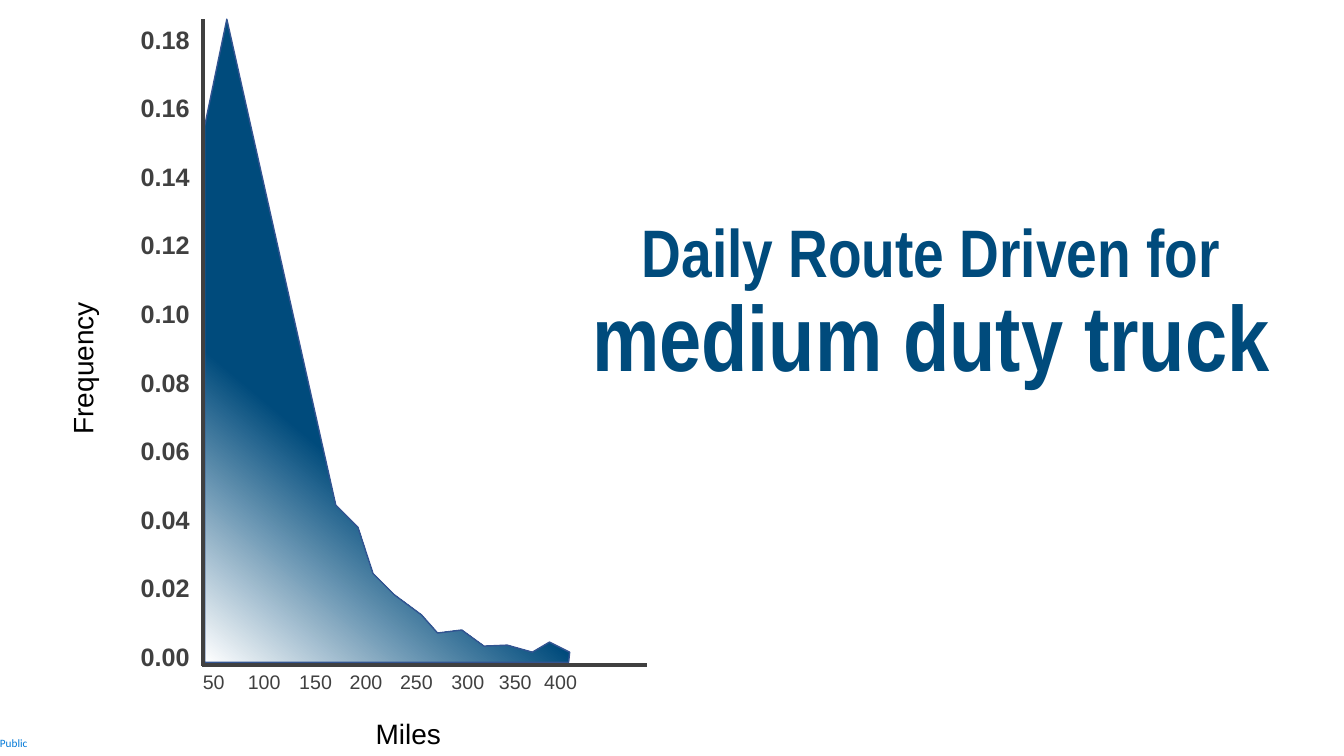
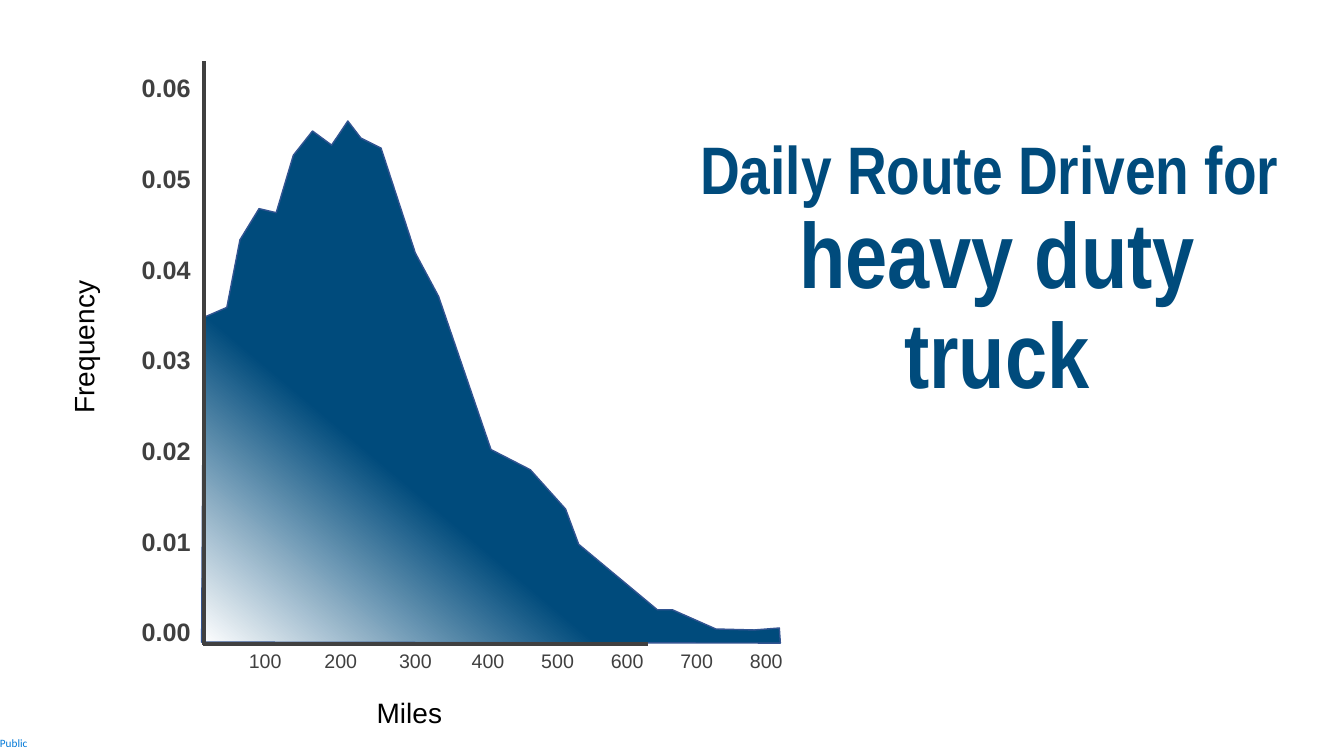
from dataclasses import dataclass
from lxml.etree import SubElement
from pptx import Presentation
from pptx.dml.color import RGBColor
from pptx.enum.shapes import MSO_CONNECTOR
from pptx.enum.text import MSO_ANCHOR, MSO_AUTO_SIZE, PP_ALIGN
from pptx.oxml.ns import qn
from pptx.util import Pt

PX = 9144  # 100 px to the inch


@dataclass(frozen=True)
class Theme:
    navy: str = "004B7C"
    edge: str = "325491"
    gray: str = "404040"
    black: str = "000000"
    white: str = "FFFFFF"
    blue: str = "0078D7"
    body: str = "Arial"
    head: str = "Arial Narrow"
    foot: str = "Calibri"
    lead: int = 48
    main: int = 66
    name: int = 20
    tick: int = 18
    mile: int = 14
    tag: int = 8


T = Theme()

CHARTS = [
    dict(
        title=["Daily Route Driven for", "medium duty truck"],
        place=(557, 149, 733, 308),
        area=[(203, 125), (203, 657), (564, 657), (565, 647), (545, 637),
              (528, 647), (503, 640), (480, 641), (458, 625), (434, 628),
              (418, 610), (391, 590), (370, 569), (355, 523), (333, 501),
              (225, 19)],
        axis=(201, 19, 660), end=642,
        step=0.02, count=10, gap=68, low=631,
        first=50, miles=[212, 262, 313, 363, 413, 464, 511, 556],
    ),
    dict(
        title=["Daily Route Driven for ", "heavy duty truck"],
        place=(681, 147, 616, 246),
        area=[(200, 637), (202, 315), (225, 305), (238, 238), (257, 207),
              (274, 211), (291, 154), (310, 130), (329, 144), (345, 120),
              (358, 137), (378, 147), (412, 251), (435, 294), (487, 446),
              (526, 466), (561, 505), (574, 540), (652, 605), (667, 605),
              (710, 624), (748, 625), (773, 623), (774, 638)],
        axis=(202, 61, 639), end=643,
        step=0.01, count=7, gap=90, low=607,
        first=100, miles=[263, 338, 412, 484, 553, 622, 691, 760],
    ),
]


def rgb(code):
    return RGBColor.from_string(code)


def write(page, box, lines, sizes, color, font=T.body, bold=False,
          align=PP_ALIGN.CENTER):
    """Add a text box with one paragraph for each line and size."""
    shape = page.shapes.add_textbox(*(n * PX for n in box))
    frame = shape.text_frame
    frame.word_wrap = True
    frame.text = "\n".join(lines)
    for para, size in zip(frame.paragraphs, sizes):
        para.alignment = align
        para.font.name, para.font.size = font, Pt(size)
        para.font.bold, para.font.color.rgb = bold, rgb(color)
    return shape


deck = Presentation()
deck.slide_width, deck.slide_height = 1333 * PX, 750 * PX

for num, chart in enumerate(CHARTS):
    page = deck.slides.add_slide(deck.slide_layouts[6])

    if num == 0:
        # The tag moves to the master, so every slide shows it.
        tag = write(page, (0, 725, 53, 25), ["Public"], [T.tag], T.blue,
                    T.foot, align=PP_ALIGN.LEFT)
        frame = tag.text_frame
        frame.vertical_anchor = MSO_ANCHOR.MIDDLE
        frame.margin_left = frame.margin_right = 0
        frame.margin_top = frame.margin_bottom = 0
        deck.slide_master.shapes.element.append(tag.element)

    title = write(page, chart["place"], chart["title"], [T.lead, T.main],
                  T.navy, T.head, bold=True)
    title.text_frame.vertical_anchor = MSO_ANCHOR.MIDDLE
    for para in title.text_frame.paragraphs:
        para.line_spacing = 0.9

    start, *rest = chart["area"]
    path = page.shapes.build_freeform(*start, scale=PX)
    path.add_line_segments(rest, close=True)
    area = path.convert_to_shape()
    area.shadow.inherit = False
    area.fill.gradient()
    area.fill.gradient_angle = 230
    for stop, spot, color in zip(area.fill.gradient_stops, (0.67, 1),
                                 (T.navy, T.white)):
        stop.position, stop.color.rgb = spot, rgb(color)
    area.line.color.rgb, area.line.width = rgb(T.edge), Pt(1)

    left, top, base = chart["axis"]
    for ends in ((left, top, left, base + 1), (left - 1, base, chart["end"], base)):
        axis = page.shapes.add_connector(MSO_CONNECTOR.STRAIGHT,
                                         *(n * PX for n in ends))
        axis.line.color.rgb, axis.line.width = rgb(T.gray), Pt(3)
        SubElement(axis.element.spPr, qn("a:effectLst"))

    side = write(page, (left - 198, base - 320, 158, 44), ["Frequency"],
                 [T.name], T.black, align=PP_ALIGN.LEFT)
    side.rotation = 270
    labels = [side, write(page, (left + 125, base + 46, 158, 44), ["Miles"],
                          [T.name], T.black)]

    for i in range(chart["count"]):
        box = (left - 99, chart["low"] - i * chart["gap"], 96, 40)
        labels.append(write(page, box, [f"{i * chart['step']:.2f}"], [T.tick],
                            T.gray, bold=True, align=PP_ALIGN.RIGHT))

    for i, mid in enumerate(chart["miles"], 1):
        labels.append(write(page, (mid - 36, base, 72, 34),
                            [str(i * chart["first"])], [T.mile], T.gray))

    for label in labels:
        label.text_frame.auto_size = MSO_AUTO_SIZE.SHAPE_TO_FIT_TEXT

deck.save("out.pptx")
